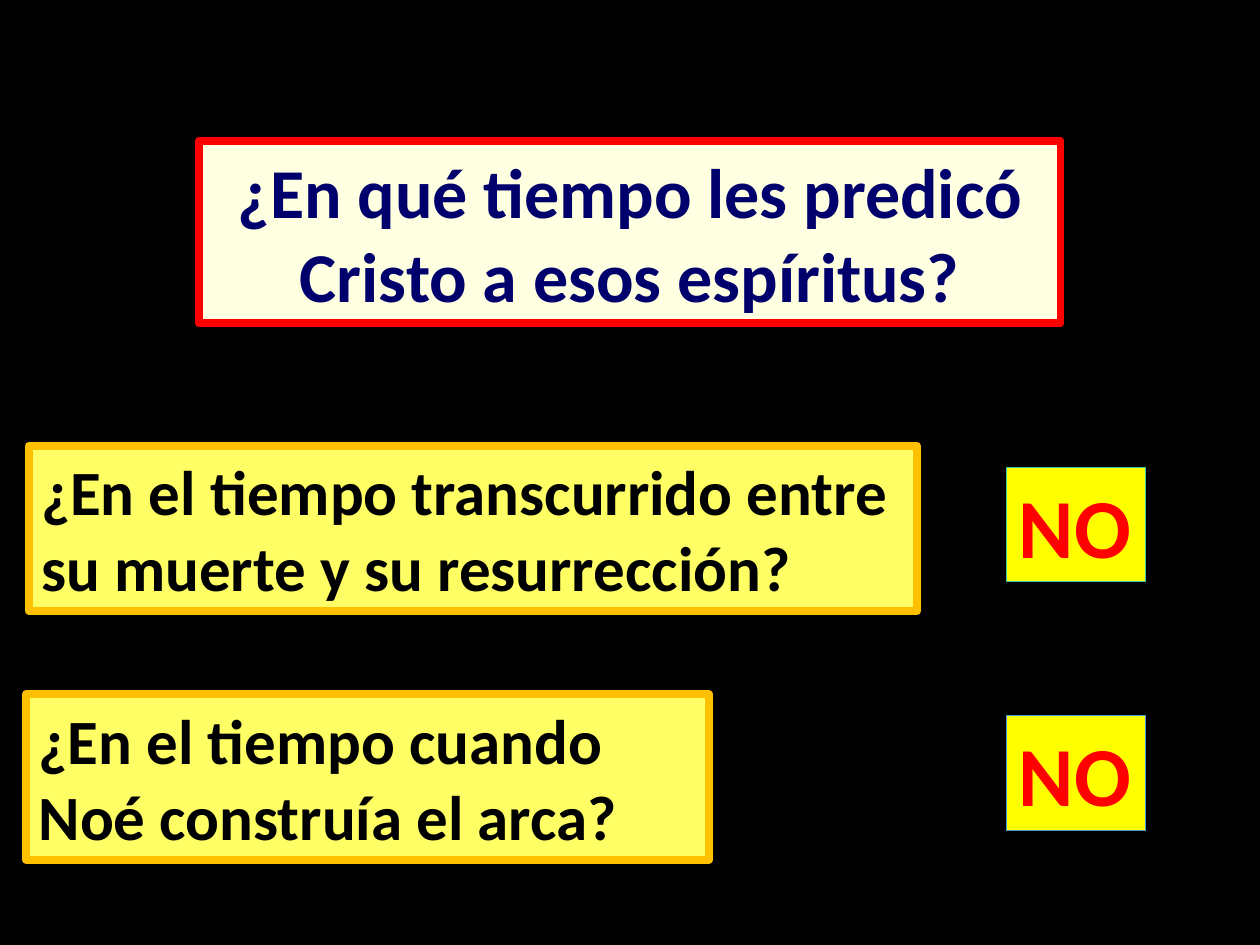
from pptx import Presentation
from pptx.dml.color import RGBColor
from pptx.enum.shapes import MSO_SHAPE
from pptx.enum.text import MSO_ANCHOR, MSO_AUTO_SIZE, PP_ALIGN
from pptx.util import Cm, Pt

RECTANGLE = MSO_SHAPE.RECTANGLE
MIDDLE = MSO_ANCHOR.MIDDLE
NO_AUTOFIT = MSO_AUTO_SIZE.NONE
LEFT, CENTER = PP_ALIGN.LEFT, PP_ALIGN.CENTER

BLACK = RGBColor(0x00, 0x00, 0x00)
NAVY = RGBColor(0x00, 0x00, 0x6C)
RED = RGBColor(0xFF, 0x00, 0x00)
CREAM = RGBColor(0xFF, 0xFF, 0xE1)
PALE_YELLOW = RGBColor(0xFF, 0xFF, 0x65)
YELLOW = RGBColor(0xFF, 0xFF, 0x00)
AMBER = RGBColor(0xFF, 0xC0, 0x00)
TEAL = RGBColor(0x32, 0xC7, 0xA9)
BLUE = RGBColor(0x4A, 0x9B, 0xDC)

# Content: question, left, top and width in cm, answer, answer border
TITLE = "¿En qué tiempo les predicó Cristo a esos espíritus?"
QUESTIONS = [
    ("¿En el tiempo transcurrido entre su muerte y su resurrección?",
     0.58, 8.99, 17.91, "NO", TEAL),
    ("¿En el tiempo cuando Noé construía el arca?",
     0.53, 14.0, 13.77, "NO", BLUE),
]
QUESTION_HEIGHT = 3.33
ANSWER_LEFT, ANSWER_DROP = 20.29, 0.43
ANSWER_WIDTH, ANSWER_HEIGHT = 2.81, 2.31


def format_box(shape, text, fill, border, border_width, size, color, align=LEFT):
    shape.fill.solid()
    shape.fill.fore_color.rgb = fill
    shape.line.color.rgb = border
    shape.line.width = Pt(border_width)
    frame = shape.text_frame
    frame.text = text
    frame.word_wrap = True
    frame.auto_size = NO_AUTOFIT
    frame.vertical_anchor = MIDDLE
    paragraph = frame.paragraphs[0]
    paragraph.alignment = align
    font = paragraph.runs[0].font
    font.name = "Calibri"
    font.size = Pt(size)
    font.bold = True
    font.color.rgb = color


def add_box(slide, left, top, width, height, *style):
    shape = slide.shapes.add_shape(
        RECTANGLE, Cm(left), Cm(top), Cm(width), Cm(height))
    shape.shadow.inherit = False
    format_box(shape, *style)


def main():
    presentation = Presentation()
    presentation.slide_width, presentation.slide_height = Cm(25.4), Cm(19.05)
    slide = presentation.slides.add_slide(presentation.slide_layouts[5])
    slide.background.fill.solid()
    slide.background.fill.fore_color.rgb = BLACK

    # Main question
    title = slide.shapes.title
    title.left, title.top = Cm(4.01), Cm(2.84)
    title.width, title.height = Cm(17.37), Cm(3.68)
    format_box(title, TITLE, CREAM, RED, 4.5, 40, NAVY, CENTER)

    # Possible times, each with its answer
    for question, left, top, width, answer, border in QUESTIONS:
        add_box(slide, left, top, width, QUESTION_HEIGHT,
                question, PALE_YELLOW, AMBER, 4.5, 36, BLACK)
        add_box(slide, ANSWER_LEFT, top + ANSWER_DROP, ANSWER_WIDTH, ANSWER_HEIGHT,
                answer, YELLOW, border, 0.75, 48, RED)

    presentation.save("out.pptx")


if __name__ == "__main__":
    main()
